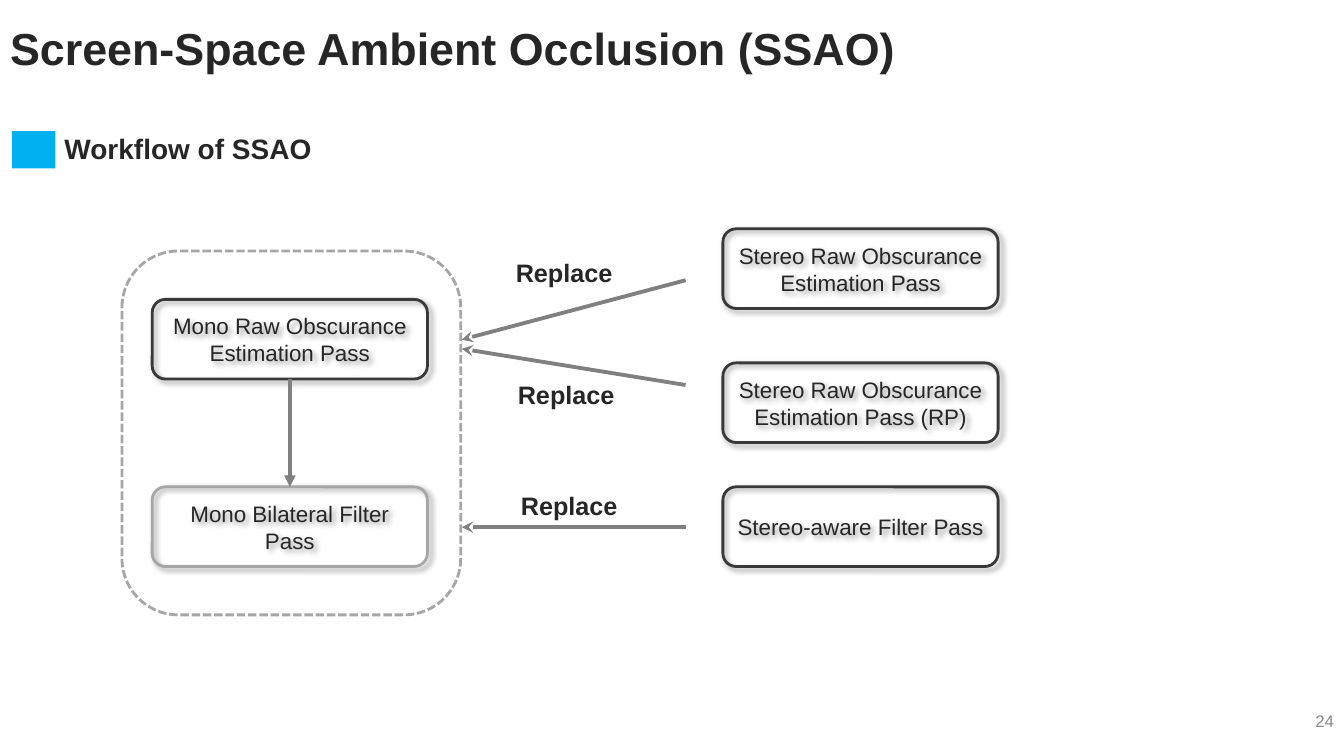
"""Build the slide that shows the SSAO workflow and its stereo replacements."""
from dataclasses import dataclass

from lxml import etree
from pptx import Presentation, util as u
from pptx.dml.color import RGBColor
from pptx.enum import dml, shapes, text
from pptx.oxml import parse_xml
from pptx.oxml.ns import qn

CELL = u.Inches(0.1)
INK, FRAME, GREY, ARROW, ACCENT = "262626", "3B3838", "A6A6A6", "808080", "00B0F0"
LEFT, CENTER, RIGHT = text.PP_ALIGN.LEFT, text.PP_ALIGN.CENTER, text.PP_ALIGN.RIGHT
TOP, MIDDLE = text.MSO_ANCHOR.TOP, text.MSO_ANCHOR.MIDDLE
PASS_WIDTH, PASS_HEIGHT = 27.3, 7.9
MONO_LEFT, STEREO_LEFT = 15.1, 71.7
FIRST_ROW, FILTER_ROW = 29.7, 48.3
ARROW_START, ARROW_END = 68, 45.8
SHADOW = (
    '<a:effectLst xmlns:a="http://schemas.openxmlformats.org/drawingml/2006/main">'
    '<a:outerShdw blurRad="50800" dist="38100" dir="2700000" algn="tl" rotWithShape="0">'
    '<a:srgbClr val="000000"><a:alpha val="40000"/></a:srgbClr>'
    "</a:outerShdw></a:effectLst>"
)


@dataclass
class Pass:
    """A rendering pass, placed by grid column and row."""

    left: float
    top: float
    lines: list[str]
    frame: str = FRAME


@dataclass
class Arrow:
    """A straight arrow between two grid points."""

    start: tuple[float, float]
    end: tuple[float, float]
    head: str = "stealth"


@dataclass
class Label:
    """A text box on the grid with its format."""

    area: tuple[float, float, float, float]
    wording: str
    size: float
    align: text.PP_ALIGN = LEFT
    anchor: text.MSO_ANCHOR = TOP
    bold: bool = True
    color: str = INK


STEREO_PASSES = [
    Pass(STEREO_LEFT, 22.7, ["Stereo Raw Obscurance", "Estimation Pass"]),
    Pass(STEREO_LEFT, 36, ["Stereo Raw Obscurance", "Estimation Pass (RP)"]),
    Pass(STEREO_LEFT, FILTER_ROW, ["Stereo-aware Filter Pass"]),
]
MONO_PASSES = [
    Pass(MONO_LEFT, FIRST_ROW, ["Mono Raw Obscurance", "Estimation Pass"]),
    Pass(MONO_LEFT, FILTER_ROW, ["Mono Bilateral Filter", "Pass"], GREY),
]
REPLACE_ARROWS = [
    Arrow((ARROW_START, 27.8), (ARROW_END, 33.7)),
    Arrow((ARROW_START, 38.2), (ARROW_END, 34.6)),
    Arrow((ARROW_START, 52.3), (ARROW_END, 52.3)),
]
MONO_CENTER = MONO_LEFT + PASS_WIDTH / 2
MONO_ARROW = Arrow(
    (MONO_CENTER, FIRST_ROW + PASS_HEIGHT), (MONO_CENTER, FILTER_ROW), "triangle"
)
LABELS = [
    Label((127.2, 69.5, 6.1, 4), "24", 12, RIGHT, MIDDLE, False, "8C8C8C"),
    Label((5.4, 12.6, 53.4, 4.4), "Workflow of SSAO", 20),
] + [
    Label((left, top, 16.5, 4), "Replace", 18, CENTER)
    for left, top in [(47.7, 25), (47.9, 37.1), (48.2, 48.2)]
]


def rgb(color: str) -> RGBColor:
    """Turn a hex string into a colour."""
    return RGBColor.from_string(color)


def grid(*cells: float) -> list[int]:
    """Turn grid columns and rows into lengths."""
    return [round(cell * CELL) for cell in cells]


def write(frame, lines: list[str], size: float, align=LEFT, anchor=TOP,
          bold: bool = False, color: str = INK) -> None:
    """Fill a text frame with one formatted paragraph a line."""
    frame.word_wrap = True
    frame.vertical_anchor = anchor
    for index, line in enumerate(lines):
        para = frame.add_paragraph() if index else frame.paragraphs[0]
        para.alignment = align
        span = para.add_run()
        span.text = line
        formats = {"name": "Arial", "size": u.Pt(size), "bold": bold}
        for name, value in formats.items():
            setattr(span.font, name, value)
        span.font.color.rgb = rgb(color)


def add_outline(parent, preset, area: tuple, color: str):
    """Add an unfilled shape with a coloured outline."""
    box = parent.add_shape(preset, *grid(*area))
    box.shadow.inherit = False
    box.fill.background()
    box.line.color.rgb = rgb(color)
    box.line.width = u.Pt(2)
    return box


def add_pass(parent, item: Pass) -> None:
    """Draw a rounded pass box with its shadow and caption."""
    area = (item.left, item.top, PASS_WIDTH, PASS_HEIGHT)
    box = add_outline(parent, shapes.MSO_SHAPE.ROUNDED_RECTANGLE, area, item.frame)
    properties = box.element.spPr
    properties.replace(properties.find(qn("a:effectLst")), parse_xml(SHADOW))
    box.text_frame.margin_left = box.text_frame.margin_right = u.Inches(0.05)
    write(box.text_frame, item.lines, 16, CENTER, MIDDLE)


def add_arrow(parent, item: Arrow) -> None:
    """Draw an arrow with a head at its end."""
    line = parent.add_connector(
        shapes.MSO_CONNECTOR.STRAIGHT, *grid(*item.start, *item.end)
    )
    line.line.color.rgb = rgb(ARROW)
    line.line.width = u.Pt(2.75)
    etree.SubElement(line.line._get_or_add_ln(), qn("a:tailEnd"), type=item.head)
    etree.SubElement(line.element.spPr, qn("a:effectLst"))


def add_label(parent, item: Label) -> None:
    """Draw a text box."""
    box = parent.add_textbox(*grid(*item.area))
    write(box.text_frame, [item.wording], item.size, item.align, item.anchor,
          item.bold, item.color)


def add_title(page, wording: str) -> None:
    """Place and format the title placeholder."""
    title = page.shapes.title
    places = zip(("left", "top", "width", "height"), grid(0, 0, 115, 10.2))
    for name, value in places:
        setattr(title, name, value)
    write(title.text_frame, [wording], 32, LEFT, MIDDLE, True)
    title.text_frame.paragraphs[0].line_spacing = 0.9


def main() -> None:
    """Build and save the deck."""
    deck = Presentation()
    deck.slide_width, deck.slide_height = u.Inches(13.33), u.Inches(7.5)
    page = deck.slides.add_slide(deck.slide_layouts[5])
    add_title(page, "Screen-Space Ambient Occlusion (SSAO)")
    for label in LABELS:
        add_label(page.shapes, label)
    marker = page.shapes.add_shape(
        shapes.MSO_SHAPE.RECTANGLE, *grid(1.2, 13, 4.3, 3.7)
    )
    marker.shadow.inherit = False
    marker.fill.solid()
    marker.fill.fore_color.rgb = rgb(ACCENT)
    marker.line.fill.background()
    for item in STEREO_PASSES:
        add_pass(page.shapes, item)
    for arrow in REPLACE_ARROWS:
        add_arrow(page.shapes, arrow)
    mono = page.shapes.add_group_shape().shapes
    for item in MONO_PASSES:
        add_pass(mono, item)
    add_arrow(mono, MONO_ARROW)
    border = add_outline(
        mono, shapes.MSO_SHAPE.ROUNDED_RECTANGLE, (12.1, 24.9, 33.6, 36.1), GREY
    )
    border.line.dash_style = dml.MSO_LINE.SQUARE_DOT
    deck.save("out.pptx")


if __name__ == "__main__":
    main()
